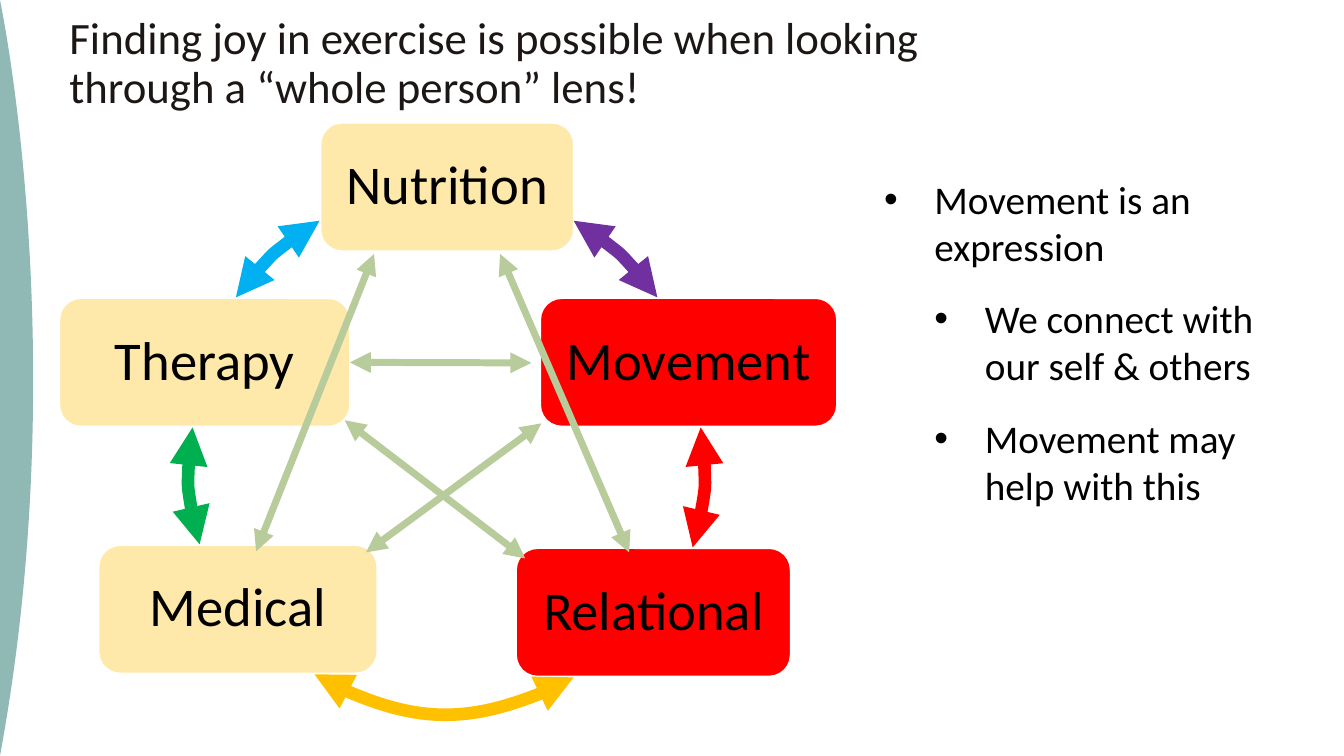
from lxml import etree
from pptx import Presentation
from pptx import util as u
from pptx.dml.color import RGBColor
from pptx.enum import shapes, text
from pptx.oxml.ns import qn

PX = 9144  # EMU per px, 100 px to the inch
THEME = dict(
    font="Calibri", title_size=32, box_size=39, body_size=28,
    title="1C1715", ink="000000", white="FFFFFF", wave="90B9B5",
    cream="FFE9AA", red="FF0000", link="B8CB9B", purple="7030A0",
    orange="FFC000", green="00B050", blue="00B0F0",
    arc_width=9, link_width=5,
)

TITLE = "Finding joy in exercise is possible when looking through a “whole person” lens!"
BULLETS = [(0, "Movement is an expression"),
           (1, "We connect with our self & others"),
           (1, "Movement may help with this")]
BOX_H = 127
# name: left, top, width, fill
BOXES = {
    "Nutrition": (318, 122, 251, "cream"),
    "Movement": (536, 296, 294, "red"),
    "Relational": (512, 544, 272, "red"),
    "Medical": (98, 541, 276, "cream"),
    "Therapy": (59, 296, 288, "cream"),
}
# Each arc is part of a ring in a square frame.
RING = 505
# colour, frame corner, then start, two control points and end
ARCS = [
    ("purple", (190, 185), (569, 219), (602, 238), (630, 264), (652, 295)),
    ("red", (194, 214), (695, 424), (702, 464), (699, 505), (687, 543)),
    ("orange", (190, 200), (569, 672), (489, 718), (390, 717), (312, 669)),
    ("green", (187, 214), (198, 540), (186, 502), (184, 463), (191, 424)),
    ("blue", (190, 185), (234, 295), (256, 264), (284, 238), (317, 219)),
]
WAVE_SIZE = (74, 750)
WAVE = ((0, 750), (74, 349), (0, 0), (0, 0))
# start, end, box whose right side the end joins
LINKS = [
    ((496, 252), (624, 548), None),
    ((371, 252), (254, 547), None),
    ((527, 360), (343, 360), "Therapy"),
    ((537, 420), (363, 548), None),
    ((342, 417), (521, 554), None),
]


def color(key):
    return RGBColor.from_string(THEME[key])


def px(*values):
    return [u.Emu(v * PX) for v in values]


def write(p, words, *, size, ink="ink", align=None, spacing=None, after=0,
          level=0, bullet=False):
    if bullet:
        pPr = p._p.get_or_add_pPr()
        pPr.set("marL", str(50 * (level + 1) * PX))
        pPr.set("indent", str(-50 * PX))
    p.level, p.alignment = level, align
    p.line_spacing, p.space_before, p.space_after = spacing, u.Pt(0), u.Pt(after)
    if bullet:
        etree.SubElement(pPr, qn("a:buFont")).set("typeface", "Arial")
        etree.SubElement(pPr, qn("a:buChar")).set("char", "•")
    r = p.add_run()
    r.text = words
    r.font.name, r.font.size = THEME["font"], u.Pt(THEME[size])
    r.font.color.rgb = color(ink)


def textbox(left, top, width, height):
    tf = s.shapes.add_textbox(*px(left, top, width, height)).text_frame
    tf.word_wrap = True
    return tf


def curve(corner, size, points, close=False):
    """Draw one cubic Bezier curve inside a frame."""
    (left, top), (width, height) = corner, size
    builder = s.shapes.build_freeform(left, top, scale=PX)
    builder.add_line_segments([(left + width, top + height)], close=False)
    sp = builder.convert_to_shape()
    sp.shadow.inherit = False
    outline = sp._element.find(".//" + qn("a:path"))
    for child in list(outline):
        outline.remove(child)
    for tag, part in (("a:moveTo", points[:1]), ("a:cubicBezTo", points[1:])):
        step = etree.SubElement(outline, qn(tag))
        for x, y in part:
            pt = etree.SubElement(step, qn("a:pt"))
            pt.set("x", str(x - left))
            pt.set("y", str(y - top))
    if close:
        etree.SubElement(outline, qn("a:close"))
    return sp


def double_arrow(sp, key, width):
    sp.line.color.rgb, sp.line.width = color(key), u.Pt(THEME[width])
    ln = sp.line._get_or_add_ln()
    for end in ("a:headEnd", "a:tailEnd"):
        etree.SubElement(ln, qn(end)).set("type", "triangle")


prs = Presentation()
prs.slide_width, prs.slide_height = px(1333, 750)
s = prs.slides.add_slide(prs.slide_layouts[6])

# Wave along the left edge
wave = curve((0, 0), WAVE_SIZE, WAVE, close=True)
wave.fill.solid()
wave.fill.fore_color.rgb = color("wave")
wave.line.fill.background()

# Ring of boxes
boxes = {}
for name, (left, top, width, fill) in BOXES.items():
    sp = boxes[name] = s.shapes.add_shape(
        shapes.MSO_SHAPE.ROUNDED_RECTANGLE, *px(left, top, width, BOX_H))
    sp.shadow.inherit = False
    sp.fill.solid()
    sp.fill.fore_color.rgb = color(fill)
    sp.line.color.rgb, sp.line.width = color("white"), u.Pt(1)
    tf = sp.text_frame
    tf.word_wrap = False
    tf.vertical_anchor = text.MSO_ANCHOR.MIDDLE
    tf.margin_left = tf.margin_right = tf.margin_top = tf.margin_bottom = px(16)[0]
    write(tf.paragraphs[0], name, size="box_size",
          align=text.PP_ALIGN.CENTER, spacing=0.9)

# Curved arrows between neighbours
for key, corner, *points in ARCS:
    sp = curve(corner, (RING, RING), points)
    sp.fill.background()
    double_arrow(sp, key, "arc_width")

# Title
write(textbox(59, 11, 975, 129).paragraphs[0], TITLE,
      size="title_size", ink="title", spacing=0.9)

# Straight arrows across the ring
for start, end, joined in LINKS:
    line = s.shapes.add_connector(shapes.MSO_CONNECTOR.STRAIGHT, *px(*start, *end))
    if joined:
        line.end_connect(boxes[joined], 3)
    double_arrow(line, "link", "link_width")
    etree.SubElement(line._element.spPr, qn("a:effectLst"))

# Bullets
tf = textbox(867, 122, 440, 390)
tf.margin_top = px(52)[0]
for i, (level, words) in enumerate(BULLETS):
    p = tf.add_paragraph() if i else tf.paragraphs[0]
    write(p, words, size="body_size", after=18, level=level, bullet=True)

prs.save("out.pptx")
